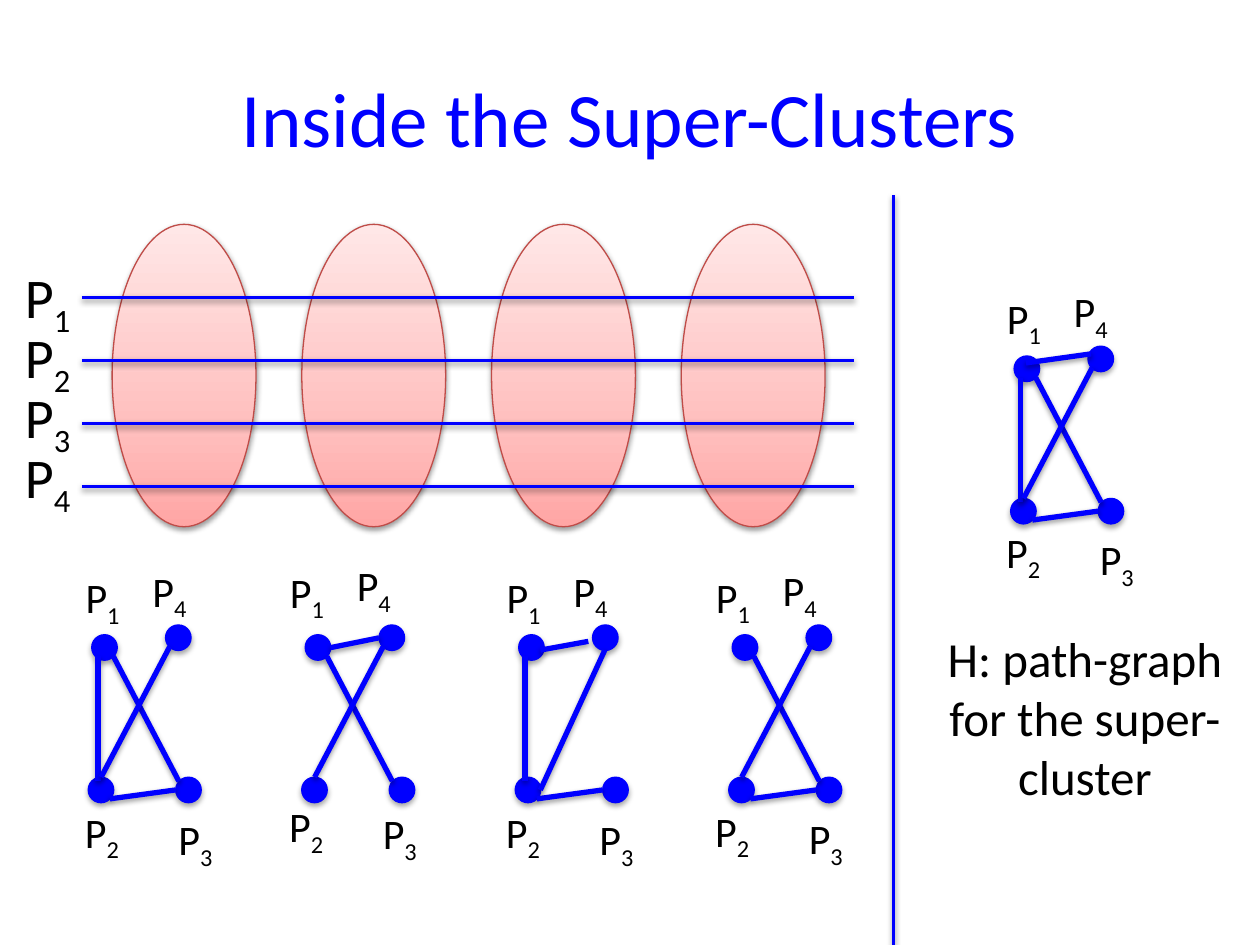
from copy import deepcopy
from lxml import etree
from pptx import Presentation
from pptx.dml.color import RGBColor
from pptx.enum import shapes as es, text as et
from pptx.oxml import ns
from pptx.util import Pt

BLUE = "0000FF"
BLACK = "000000"
NODES = {1: (2, 5.6), 2: (0, 87), 3: (50, 87), 4: (44.2, 0)}
NAMES = {1: (-8.6, -33.8), 2: (-9, 100), 3: (44.5, 104.2), 4: (29.6, -37.6)}
E12 = (5.6, 18, 5.6, 89.3)
E13 = (14.4, 18, 51.8, 89.3)
E23 = (50, 94.3, 12.4, 99.4)
E24 = (46.6, 12.4, 7.4, 87)


def color(code):
    return RGBColor.from_string(code)


def shade(shape, alpha=38, dist=1.6):
    part = etree.SubElement(shape._element.spPr, ns.qn("a:effectLst"))
    cast = etree.SubElement(
        part, ns.qn("a:outerShdw"), blurRad=str(int(Pt(3.1))),
        dist=str(int(Pt(dist))), dir="5400000", rotWithShape="0")
    tone = etree.SubElement(cast, ns.qn("a:srgbClr"), val=BLACK)
    etree.SubElement(tone, ns.qn("a:alpha"), val=str(alpha * 1000))


def style(font, size, code):
    font.name = "Calibri"
    font.size = Pt(size)
    font.color.rgb = color(code)


def line(host, x1, y1, x2, y2, width):
    link = host.add_connector(es.MSO_CONNECTOR.STRAIGHT, Pt(x1), Pt(y1), Pt(x2), Pt(y2))
    link.line.color.rgb = color(BLUE)
    link.line.width = Pt(width)
    shade(link)


def oval(host, x, y, wide, high, edge):
    shape = host.add_shape(es.MSO_SHAPE.OVAL, Pt(x), Pt(y), Pt(wide), Pt(high))
    shape.line.color.rgb = color(edge)
    shape.line.width = Pt(0.75)
    return shape


def box(host, x, y, wide, high):
    item = host.add_textbox(Pt(x), Pt(y), Pt(wide), Pt(high))
    item.text_frame.word_wrap = True
    item.text_frame.auto_size = et.MSO_AUTO_SIZE.SHAPE_TO_FIT_TEXT
    return item.text_frame.paragraphs[0]


def label(host, x, y, num, size):
    para = box(host, x, y, 45.4, 46 if size > 24 else 36.3)
    for part in ("P", str(num)):
        run = para.add_run()
        run.text = part
        style(run.font, size, BLACK)
    run._r.get_or_add_rPr().set("baseline", "-25000")


def title(slide, x, y, wide, high):
    head = slide.shapes.title
    head.left, head.top, head.width, head.height = Pt(x), Pt(y), Pt(wide), Pt(high)
    frame = head.text_frame
    frame.text = "Inside the Super-Clusters"
    frame.vertical_anchor = et.MSO_ANCHOR.MIDDLE
    para = frame.paragraphs[0]
    para.alignment = et.PP_ALIGN.CENTER
    style(para.runs[0].font, 44, BLUE)


def cluster(host, x, y, wide, high):
    shape = oval(host, x, y, wide, high, "BF4C48")
    fill = shape.fill
    fill.gradient()
    fill.gradient_angle = 90
    stops = shape._element.spPr.find(".//" + ns.qn("a:gsLst"))
    stops.insert(1, deepcopy(stops[0]))
    tones = ((0, "FFA6A5"), (0.35, "FFC0BF"), (1, "FFE7E7"))
    for stop, (place, code) in zip(fill.gradient_stops, tones):
        stop.position = place
        stop.color.rgb = color(code)
    shade(shape)


def paths(host, x, y):
    for col in range(4):
        cluster(host, x + 56.9 + 108.4 * col, y, 82.2, 172.8)
    names = host.add_group_shape().shapes
    for row in range(4):
        label(names, x, y + 18 + 34.4 * row, row + 1, 32)
        high = y + 41.7 + 36 * row
        line(host, x + 39.6, high, x + 480.8, high, 2)


def graph(host, x, y, edges, dx=0, dy=0):
    for left, top in NODES.values():
        node = oval(host, x + left, y + top, 14.6, 14.6, BLUE)
        node.fill.solid()
        node.fill.fore_color.rgb = color(BLUE)
        shade(node, 35, 1.8)
    for x1, y1, x2, y2 in edges:
        line(host, x + x1, y + y1, x + x2, y + y2, 3)
    for num, (left, top) in NAMES.items():
        label(host, x + left + dx, y + top + dy, num, 24)


def row(host, x, y):
    plans = (
        ((E12, E13, E23, E24), 0, 0),
        (((16.4, 13, 44.2, 7.4), E13, E24), -5.2, -3.2),
        ((E12, E23, (51.2, 14.4, 14.4, 94.3), (14.4, 14.4, 41.8, 9.4)), -3.4, 0),
        ((E13, E23, E24), -5.8, -0.4),
    )
    for col, plan in enumerate(plans):
        graph(host.add_group_shape().shapes, x + 122 * col, y, *plan)


def side(host, x, y):
    line(host, x, y, x, 540, 2)
    graph(host, x + 67, y + 86.2, (E12, E13, E23, E24, (46, 4.4, 8.8, 9.6)), -0.6, -0.6)
    para = box(host, x + 21.6, y + 244.1, 175.7, 108.7)
    para.text = "H: path-graph for the super-cluster"
    para.alignment = et.PP_ALIGN.CENTER
    style(para.runs[0].font, 28, BLACK)


def main():
    deck = Presentation()
    deck.slide_width, deck.slide_height = Pt(720), Pt(540)
    slide = deck.slides.add_slide(deck.slide_layouts[5])
    title(slide, 36, 21.6, 648, 90)
    paths(slide.shapes, 7.2, 128.2)
    row(slide.shapes, 50.4, 357.1)
    side(slide.shapes, 510.5, 111.6)
    deck.save("out.pptx")


if __name__ == "__main__":
    main()
